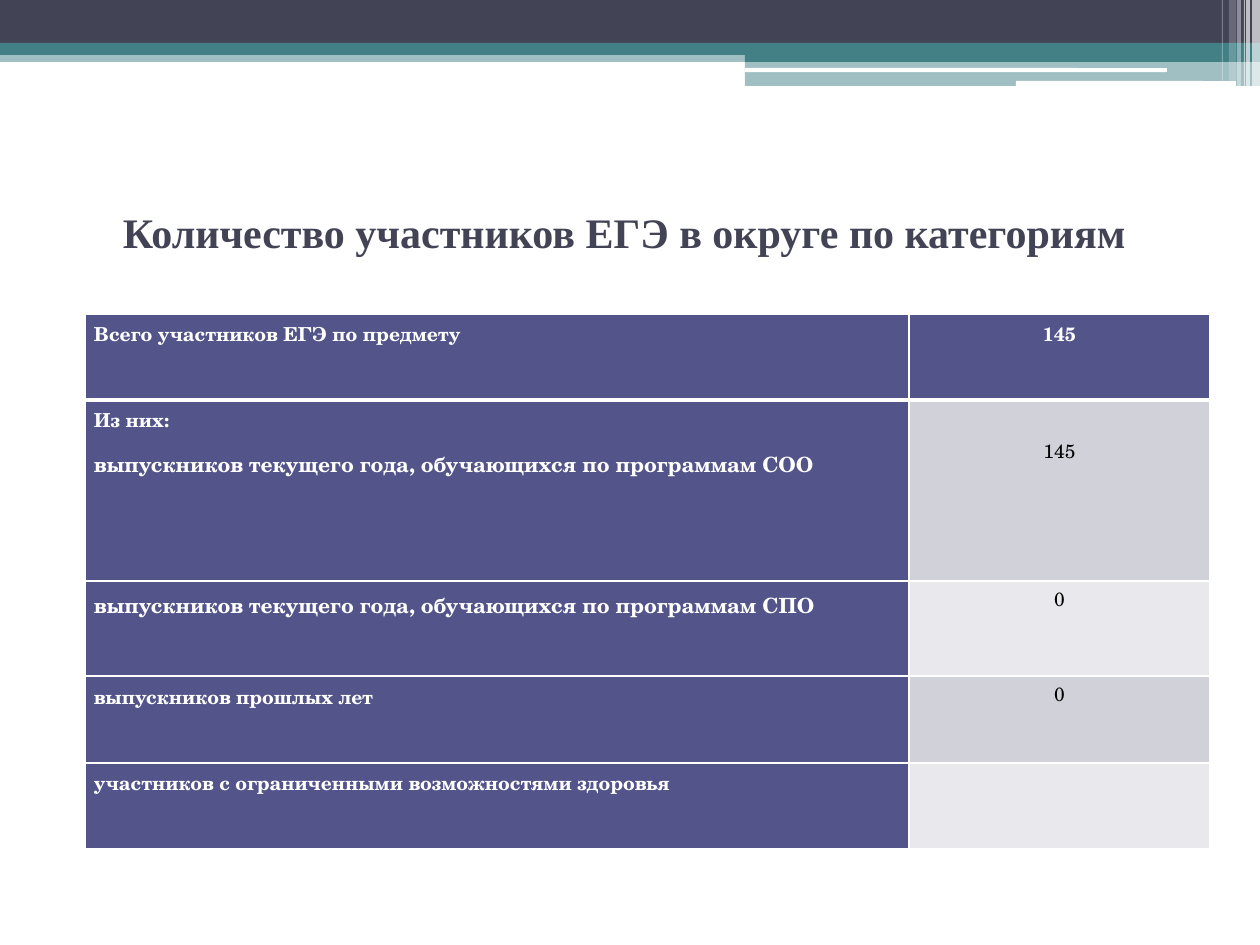
from dataclasses import dataclass
from lxml import etree
from pptx import Presentation
from pptx import util as u
from pptx.dml.color import RGBColor
from pptx.enum import shapes, text
from pptx.oxml.ns import qn

SCALE = 914400 / 126


@dataclass(frozen=True)
class Theme:
    dark: str = "424456"
    teal: str = "438086"
    white: str = "FFFFFF"
    black: str = "000000"
    head: str = "53548A"
    odd: str = "D1D1DA"
    even: str = "E9E9ED"
    serif: str = "Times New Roman"
    school: str = "TeX Gyre Schola"
    big: int = 24
    mid: int = 12
    small: int = 11


T = Theme()
ALIGN = text.PP_ALIGN


def px(n):
    return u.Emu(round(n * SCALE))


def write(para, words, font=T.school, size=T.small, color=T.white,
          bold=True, align=ALIGN.JUSTIFY, lead=1.15, before=0):
    """Put one formatted run into a paragraph."""
    para.alignment, para.line_spacing = align, lead
    para.space_before = u.Pt(before)
    run = para.add_run()
    run.text = words
    run.font.name, run.font.size, run.font.bold = font, u.Pt(size), bold
    run.font.color.rgb = RGBColor.from_string(color)


def bar(slide, box, color, alpha=100, kind=shapes.MSO_SHAPE.RECTANGLE):
    shape = slide.shapes.add_shape(kind, *map(px, box))
    shape.shadow.inherit = False
    shape.fill.solid()
    shape.fill.fore_color.rgb = RGBColor.from_string(color)
    shape.line.fill.background()
    if alpha < 100:
        tint = next(shape.element.iter(qn("a:srgbClr")))
        etree.SubElement(tint, qn("a:alpha"), val=str(alpha * 1000))


def banner(slide, box):
    left, top, wide, high = box
    # Full-width bands, then the step on the right
    step = 745
    for x, y, h, color, alpha in [
            (0, 50, 12, T.teal, 50), (0, 0, 43, T.dark, 100),
            (0, 43, 12, T.teal, 100), (step, 49, 13, T.teal, 100),
            (step, 61, 25, T.teal, 50)]:
        bar(slide, (left + x, top + y, wide - x, h), color, alpha)
    # White rules
    for x, y, w, h in [(step, 68, 422, 4), (1016, 81, 220, 5)]:
        bar(slide, (left + x, top + y, w, h), T.white,
            kind=shapes.MSO_SHAPE.ROUNDED_RECTANGLE)
    # Pale stripes at the right edge: gap to that edge, width, height, opacity
    for gap, w, h, alpha in [
            (8, 8, high, 65), (14, 4, high, 65), (16, 1, high, 60),
            (23, 4, high, 40), (31, 7, 81, 20), (38, 1, 81, 30)]:
        bar(slide, (left + wide - gap, top, w, h), T.white, alpha)


def heading(slide, box, words):
    title = slide.shapes.title
    title.left, title.top, title.width, title.height = map(px, box)
    frame = title.text_frame
    frame.word_wrap = True
    frame.margin_right = px(24)
    frame.vertical_anchor = text.MSO_ANCHOR.MIDDLE
    write(frame.paragraphs[0], words, font=T.serif, size=T.big,
          color=T.dark, align=ALIGN.CENTER, lead=1)


def border(cell, side, width):
    props = cell._tc.get_or_add_tcPr()
    line = etree.Element(qn("a:" + side), w=str(u.Pt(width)))
    fill = etree.SubElement(line, qn("a:solidFill"))
    etree.SubElement(fill, qn("a:srgbClr"), val=T.white)
    return props, line


def dress(cell, color, top, foot):
    """Set a cell's insets, fill and white borders."""
    cell.margin_left = cell.margin_right = px(9)
    cell.margin_top, cell.margin_bottom = px(top), 0
    cell.fill.solid()
    cell.fill.fore_color.rgb = RGBColor.from_string(color)
    widths = {"lnL": 1, "lnR": 1, "lnT": foot[0], "lnB": foot[1]}
    for spot, (side, width) in enumerate(widths.items()):
        props, line = border(cell, side, width)
        props.insert(spot, line)


def counts(slide, box, cols, rows):
    grid = slide.shapes.add_table(len(rows), len(cols), *map(px, box)).table
    grid.first_row = grid.horz_banding = False
    for col, wide in zip(grid.columns, cols):
        col.width = px(wide)
    for i, (high, lines, value, tops) in enumerate(rows):
        grid.rows[i].height = px(high)
        label, count = grid.cell(i, 0), grid.cell(i, 1)
        tone = T.head if i == 0 else (T.odd if i % 2 else T.even)
        foot = (3 if i == 1 else 1, 3 if i == 0 else 1)
        dress(label, T.head, tops[0], foot)
        dress(count, tone, tops[1], foot)
        # Category name, one paragraph a line
        for n, (words, size) in enumerate(lines):
            frame = label.text_frame
            para = frame.add_paragraph() if n else frame.paragraphs[0]
            write(para, words, size=size, before=5 if n else 0)
        # Number of people
        if value:
            write(count.text_frame.paragraphs[0], value, bold=i == 0,
                  color=T.black if i else T.white, align=ALIGN.CENTER)


def main():
    deck = Presentation()
    deck.slide_width, deck.slide_height = px(1260), px(945)
    slide = deck.slides.add_slide(deck.slide_layouts[5])
    banner(slide, (0, 0, 1260, 86))
    heading(slide, (63, 158, 1134, 147),
            "Количество участников ЕГЭ в округе по категориям")
    # Row height, label lines, value, top insets of both cells
    rows = [
        (86, [("Всего участников ЕГЭ по предмету", T.small)], "145", (0, 0)),
        (181, [("Из них:", T.small),
               ("выпускников текущего года, обучающихся по программам СОО",
                T.mid)], "145", (0, 32)),
        (95, [("выпускников текущего года, обучающихся по программам СПО",
               T.mid)], "0", (3, 0)),
        (87, [("выпускников прошлых лет", T.small)], "0", (1, 0)),
        (86, [("участников с ограниченными возможностями здоровья",
               T.small)], "", (0, 0)),
    ]
    counts(slide, (85, 314, 1125, 535), (824, 301), rows)
    deck.save("out.pptx")


if __name__ == "__main__":
    main()
